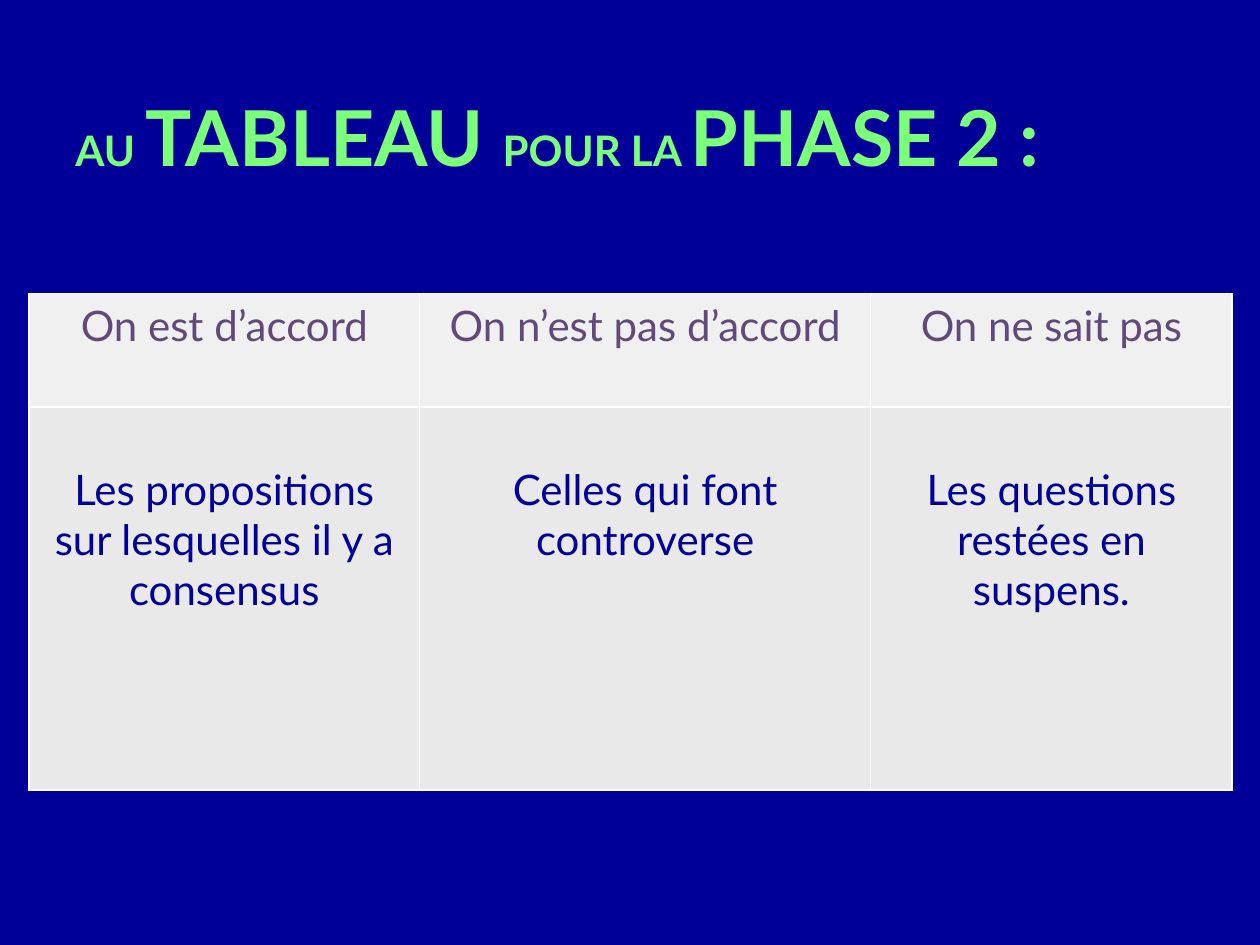
"""Build the slide that lays out the board for phase 2."""
from dataclasses import dataclass

from lxml import etree
from pptx import Presentation
from pptx.dml.color import RGBColor
from pptx.enum.text import MSO_ANCHOR, PP_ALIGN
from pptx.oxml.ns import qn
from pptx.util import Inches, Pt

CENTER = PP_ALIGN.CENTER
LEFT = PP_ALIGN.LEFT
MIDDLE = MSO_ANCHOR.MIDDLE
BORDER_SIDES = ("a:lnL", "a:lnR", "a:lnT", "a:lnB")


@dataclass(frozen=True)
class Theme:
    font: str = "Lato"
    background: str = "000099"
    title: str = "7BFF7B"
    heading: str = "604A7B"
    heading_fill: str = "F0F0F0"
    body: str = "010199"
    body_fill: str = "E9E9E9"
    border: str = "FFFFFF"
    border_width: int = 1
    small: int = 24
    large: int = 44


class Board:
    def __init__(self, deck, theme):
        self.deck = deck
        self.theme = theme
        self.slide = deck.slides.add_slide(deck.slide_layouts[6])
        self.paint(self.slide.background.fill, theme.background)

    def across(self, percent):
        return round(self.deck.slide_width * percent / 100)

    def down(self, percent):
        return round(self.deck.slide_height * percent / 100)

    def paint(self, fill, color):
        fill.solid()
        fill.fore_color.rgb = RGBColor.from_string(color)

    def apply(self, target, values):
        for name, value in values.items():
            setattr(target, name, value)

    def add_words(self, paragraph, text, size, color, bold=False):
        run = paragraph.add_run()
        run.text = text
        self.apply(run.font, {"name": self.theme.font, "size": Pt(size), "bold": bold})
        run.font.color.rgb = RGBColor.from_string(color)

    def title(self, left, top, width, height, parts):
        heading = self.slide.shapes.add_textbox(
            self.across(left), self.down(top), self.across(width), self.down(height))
        frame = heading.text_frame
        self.apply(frame, {"word_wrap": True, "vertical_anchor": MIDDLE})
        paragraph = frame.paragraphs[0]
        paragraph.alignment = LEFT
        for text, size in parts:
            self.add_words(paragraph, text, size, self.theme.title, bold=True)

    def outline(self, cell):
        properties = cell._tc.get_or_add_tcPr()
        for side in BORDER_SIDES:
            line = etree.SubElement(
                properties, qn(side), w=str(int(Pt(self.theme.border_width))))
            solid = etree.SubElement(line, qn("a:solidFill"))
            etree.SubElement(solid, qn("a:srgbClr"), val=self.theme.border)

    def cell(self, cell, text, color, fill, top_margin):
        self.apply(cell, {"margin_left": Inches(0.1), "margin_right": Inches(0.1),
                          "margin_top": Inches(top_margin), "margin_bottom": Inches(0.05)})
        self.outline(cell)
        self.paint(cell.fill, fill)
        paragraph = cell.text_frame.paragraphs[0]
        paragraph.alignment = CENTER
        self.add_words(paragraph, text, self.theme.small, color)

    def table(self, left, top, widths, heights, rows, styles):
        table = self.slide.shapes.add_table(
            len(heights), len(widths), self.across(left), self.down(top),
            self.across(sum(widths)), self.down(sum(heights))).table
        for column, width in zip(table.columns, widths):
            column.width = self.across(width)
        for row, height, texts, style in zip(table.rows, heights, rows, styles):
            row.height = self.down(height)
            for cell, text in zip(row.cells, texts):
                self.cell(cell, text, **style)


def main():
    deck = Presentation()
    deck.slide_width, deck.slide_height = Inches(10), Inches(7.5)
    theme = Theme()
    board = Board(deck, theme)
    board.title(5, 4.27, 95, 20.13, [
        ("AU ", theme.small), ("TABLEAU ", theme.large),
        ("POUR LA ", theme.small), ("PHASE 2 :", theme.large)])
    board.table(
        2.3, 31.07, widths=(31, 35.8, 28.7), heights=(12, 40.53),
        rows=(
            ("On est d’accord", "On n’est pas d’accord", "On ne sait pas"),
            ("Les propositions sur lesquelles il y a consensus",
             "Celles qui font controverse",
             "Les questions restées en suspens."),
        ),
        styles=(
            {"color": theme.heading, "fill": theme.heading_fill, "top_margin": 0.05},
            {"color": theme.body, "fill": theme.body_fill, "top_margin": 0.45},
        ))
    deck.save("out.pptx")


if __name__ == "__main__":
    main()
